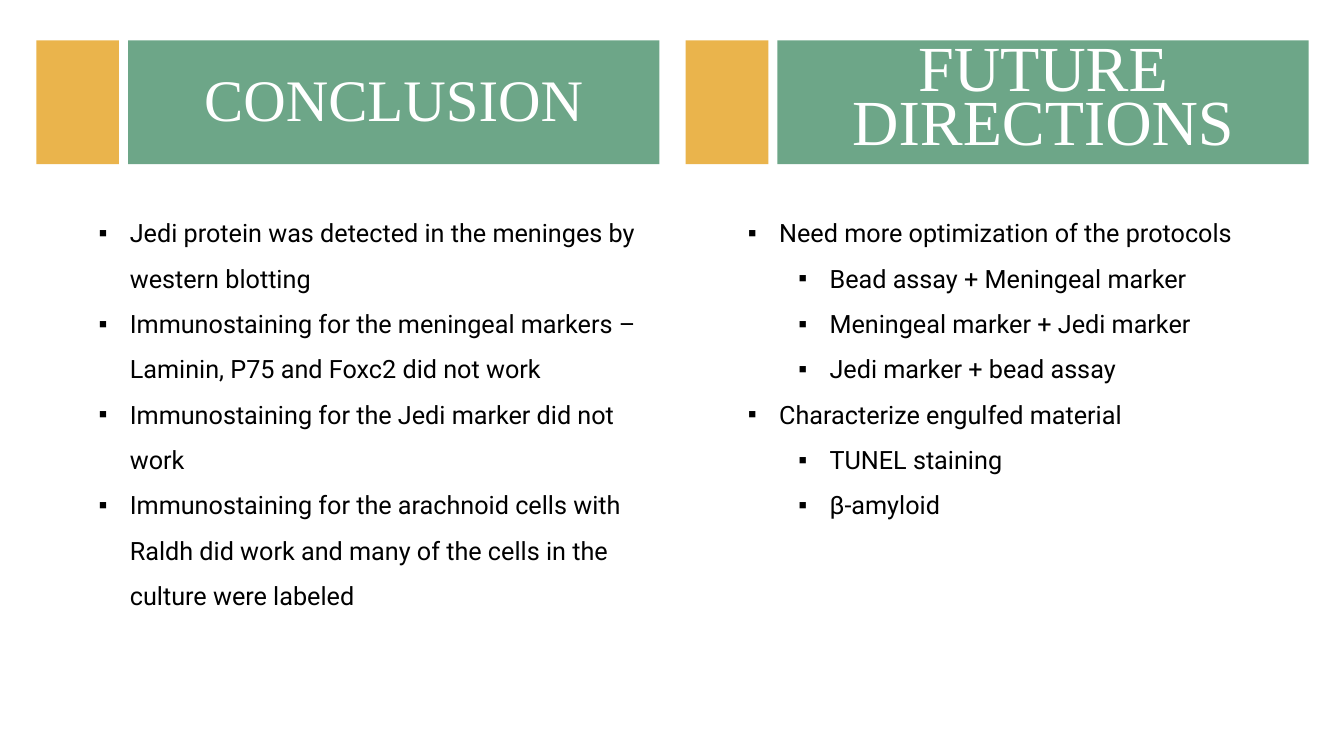
from lxml.etree import SubElement
from pptx import Presentation
from pptx.dml.color import RGBColor
from pptx.enum.shapes import MSO_SHAPE as Shape
from pptx.enum.text import MSO_ANCHOR as Anchor, MSO_AUTO_SIZE as AutoSize, PP_ALIGN as Align
from pptx.oxml.ns import qn
from pptx.util import Inches, Pt

COLORS = {"green": "6DA688", "gold": "EAB44C", "white": "FFFFFF", "black": "000000"}
SLIDE_WIDTH, SLIDE_HEIGHT = 13.33, 7.5
MARGIN, COLUMN_STEP = 0.36, 6.44
HEADER_TOP, HEADER_HEIGHT = 0.4, 1.23
ACCENT_WIDTH, HEADER_WIDTH, GAP = 0.82, 5.27, 0.09
LIST_TOP, LIST_INSET = 1.96, 0.52
HANGING, LEVEL_STEP = 0.31, 0.5

CONCLUSIONS = [
    (0, "Jedi protein was detected in the meninges by western blotting"),
    (0, "Immunostaining for the meningeal markers – Laminin, P75 and Foxc2 did not work"),
    (0, "Immunostaining for the Jedi marker did not work"),
    (0, "Immunostaining for the arachnoid cells with Raldh did work and many of the cells "
        "in the culture were labeled"),
]
DIRECTIONS = [
    (0, "Need more optimization of the protocols"),
    (1, "Bead assay + Meningeal marker"),
    (1, "Meningeal marker + Jedi marker"),
    (1, "Jedi marker + bead assay"),
    (0, "Characterize engulfed material"),
    (1, "TUNEL staining"),
    (1, "β-amyloid"),
]


def style_font(para, name, size, color):
    """Set the font of a whole paragraph."""
    para.font.name = name
    para.font.size = Pt(size)
    para.font.color.rgb = RGBColor.from_string(COLORS[color])


def add_block(page, left, top, width, height, color):
    """Add a plain filled rectangle."""
    block = page.shapes.add_shape(
        Shape.RECTANGLE, Inches(left), Inches(top), Inches(width), Inches(height))
    block.shadow.inherit = False
    block.fill.solid()
    block.fill.fore_color.rgb = RGBColor.from_string(COLORS[color])
    block.line.fill.background()
    return block


def add_header(page, left, top, title, size, spacing):
    """Add a gold accent and a green title bar beside it."""
    add_block(page, left, top, ACCENT_WIDTH, HEADER_HEIGHT, "gold")
    bar = add_block(page, left + ACCENT_WIDTH + GAP, top, HEADER_WIDTH, HEADER_HEIGHT, "green")
    frame = bar.text_frame
    frame.word_wrap = True
    frame.vertical_anchor = Anchor.MIDDLE
    para = frame.paragraphs[0]
    para.text = title
    para.alignment = Align.CENTER
    para.line_spacing = spacing
    style_font(para, "Times New Roman", size, "white")


def add_list(page, left, top, width, height, items):
    """Add a bulleted list of (level, text) items."""
    box = page.shapes.add_textbox(Inches(left), Inches(top), Inches(width), Inches(height))
    frame = box.text_frame
    frame.word_wrap = True
    frame.auto_size = AutoSize.SHAPE_TO_FIT_TEXT
    for index, (level, text) in enumerate(items):
        para = frame.add_paragraph() if index else frame.paragraphs[0]
        para.text = text
        para.level = level
        para.line_spacing = 1.5
        props = para._p.get_or_add_pPr()
        props.set("marL", str(Inches(HANGING + level * LEVEL_STEP)))
        props.set("indent", str(-Inches(HANGING)))
        SubElement(props, qn("a:buFont"), typeface="Arial")
        SubElement(props, qn("a:buChar"), char="▪")
        style_font(para, "Roboto", 18, "black")


def add_column(page, left, title, size, spacing, list_width, list_height, items):
    """Add one column: a header above a bulleted list."""
    add_header(page, left, HEADER_TOP, title, size, spacing)
    add_list(page, left + LIST_INSET, LIST_TOP, list_width, list_height, items)


def main():
    """Build the two-column slide."""
    deck = Presentation()
    deck.slide_width, deck.slide_height = Inches(SLIDE_WIDTH), Inches(SLIDE_HEIGHT)
    page = deck.slides.add_slide(deck.slide_layouts[6])
    add_column(page, MARGIN, "CONCLUSION", 42, 0.9, 5.8, 4.49, CONCLUSIONS)
    add_column(page, MARGIN + COLUMN_STEP, "FUTURE DIRECTIONS", 45.9, 0.7, 5.14, 3.89, DIRECTIONS)
    deck.save("out.pptx")


if __name__ == "__main__":
    main()
